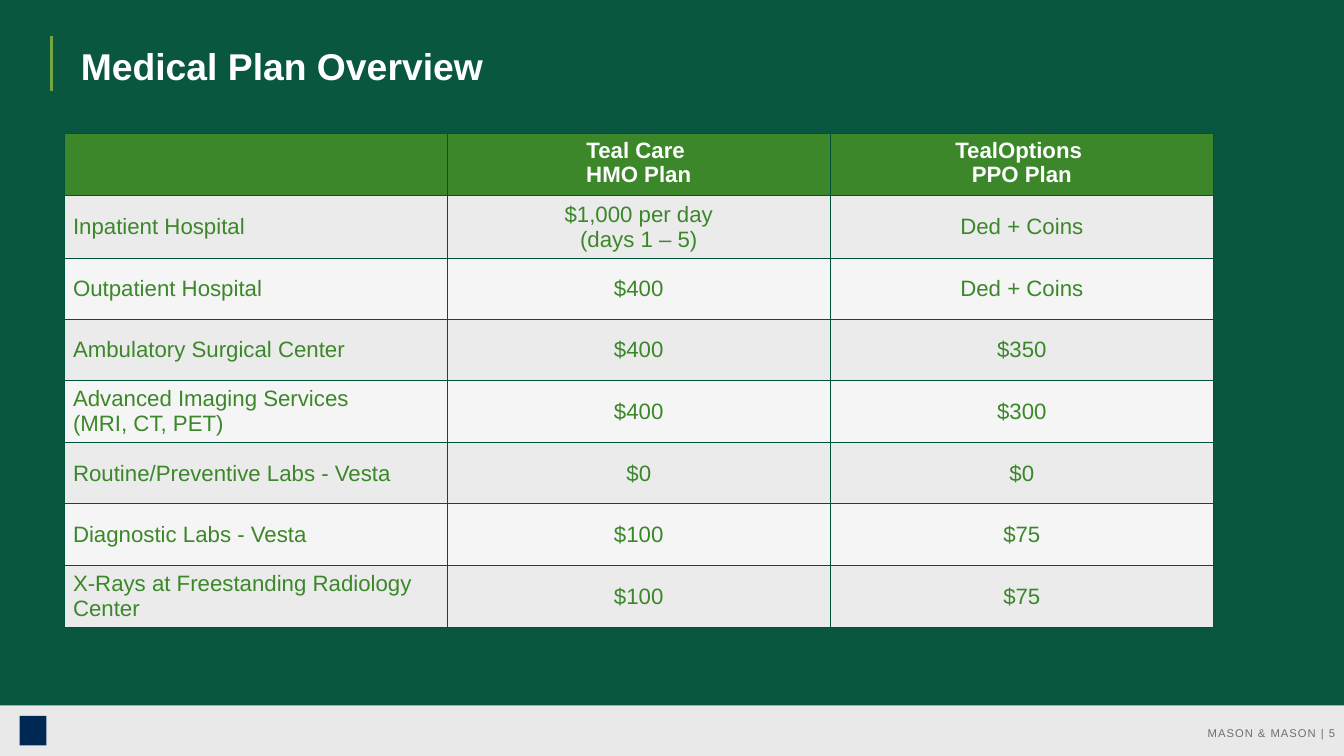
from dataclasses import dataclass

from lxml import etree
from pptx import Presentation, util as u
from pptx.dml.color import RGBColor
from pptx.enum import shapes, text
from pptx.oxml import ns


@dataclass(frozen=True)
class Theme:
    font: str = "Arial"
    back: str = "095641"
    bar: str = "E9E9EA"
    rule: str = "73A641"
    mark: str = "002855"
    white: str = "FFFFFF"
    gray: str = "6D6E71"
    green: str = "3B8729"
    edge: str = "00523E"
    bands: tuple = ("EBEBEC", "F5F5F6")
    title: float = 30.2
    body: float = 18
    small: float = 9.1


def paint(fill, color):
    fill.solid()
    fill.fore_color.rgb = RGBColor.from_string(color)


class Deck:
    def __init__(self, theme, wide, high):
        self.theme = theme
        self.file = Presentation()
        self.file.slide_width = u.Inches(wide)
        self.file.slide_height = u.Inches(high)
        self.slide = self.file.slides.add_slide(self.file.slide_layouts[6])
        paint(self.slide.background.fill, theme.back)

    def place(self, x, y, w, h):
        """Turn percent shares of the slide into lengths."""
        wide, high = self.file.slide_width, self.file.slide_height
        return [u.Emu(round(share * size / 100))
                for share, size in zip((x, y, w, h), (wide, high, wide, high))]

    def style(self, frame, size, color, bold=False, align=text.PP_ALIGN.LEFT, gap=0):
        for para in frame.paragraphs:
            para.alignment = align
            for run in para.runs:
                run.font.name = self.theme.font
                run.font.size = u.Pt(size)
                run.font.bold = bold
                run.font.color.rgb = RGBColor.from_string(color)
                if gap:
                    run._r.get_or_add_rPr().set("spc", str(gap))

    def rect(self, area, color):
        box = self.slide.shapes.add_shape(shapes.MSO_SHAPE.RECTANGLE, *self.place(*area))
        box.shadow.inherit = False
        paint(box.fill, color)
        box.line.fill.background()

    def rule(self, x, top, end, color, width):
        left, start, _, stop = self.place(x, top, 0, end)
        line = self.slide.shapes.add_connector(
            shapes.MSO_CONNECTOR.STRAIGHT, left, start, left, stop)
        line.line.color.rgb = RGBColor.from_string(color)
        line.line.width = u.Pt(width)
        etree.SubElement(line._element.spPr, ns.qn("a:effectLst"))

    def label(self, area, words, size, color, **look):
        frame = self.slide.shapes.add_textbox(*self.place(*area)).text_frame
        frame.word_wrap = True
        frame.vertical_anchor = text.MSO_ANCHOR.MIDDLE
        frame.text = words
        self.style(frame, size, color, **look)

    def border(self, cell):
        props = cell._tc.get_or_add_tcPr()
        for spot, side in enumerate(("lnL", "lnR", "lnT", "lnB")):
            line = etree.Element(ns.qn(f"a:{side}"), w=str(u.Pt(1)))
            solid = etree.SubElement(line, ns.qn("a:solidFill"))
            etree.SubElement(solid, ns.qn("a:srgbClr"), val=self.theme.edge)
            props.insert(spot, line)

    def table(self, area, rows):
        look = self.theme
        grid = self.slide.shapes.add_table(
            len(rows), len(rows[0]), *self.place(*area)).table
        grid.horz_banding = False
        for r, row in enumerate(rows):
            head = r == 0
            for c, words in enumerate(row):
                cell = grid.cell(r, c)
                cell.text = words
                cell.vertical_anchor = text.MSO_ANCHOR.TOP if head else text.MSO_ANCHOR.MIDDLE
                paint(cell.fill, look.green if head else look.bands[(r - 1) % 2])
                self.style(cell.text_frame, look.body,
                           look.white if head else look.green, head,
                           text.PP_ALIGN.CENTER if c else text.PP_ALIGN.LEFT)
                self.border(cell)


PLANS = [
    ("", "Teal Care \nHMO Plan", "TealOptions \nPPO Plan"),
    ("Inpatient Hospital", "$1,000 per day\n(days 1 – 5)", "Ded + Coins"),
    ("Outpatient Hospital", "$400", "Ded + Coins"),
    ("Ambulatory Surgical Center", "$400", "$350"),
    ("Advanced Imaging Services\n(MRI, CT, PET)", "$400", "$300"),
    ("Routine/Preventive Labs - Vesta", "$0", "$0"),
    ("Diagnostic Labs - Vesta", "$100", "$75"),
    ("X-Rays at Freestanding Radiology Center", "$100", "$75"),
]


def main():
    theme = Theme()
    deck = Deck(theme, 15.11, 8.5)
    deck.rect((0, 93.29, 100, 6.71), theme.bar)
    deck.rule(3.84, 4.71, 12, theme.rule, 2)
    deck.rect((1.46, 94.71, 2, 3.88), theme.mark)
    deck.label((5.36, 5.88, 80.28, 5.65), "Medical Plan Overview",
               theme.title, theme.white, bold=True)
    deck.label((77.5, 94.82, 22.5, 4.24), "MASON & MASON | 5",
               theme.small, theme.gray, align=text.PP_ALIGN.RIGHT, gap=80)
    deck.table((4.77, 17.65, 85.51, 64.8), PLANS)
    deck.file.save("out.pptx")


if __name__ == "__main__":
    main()
